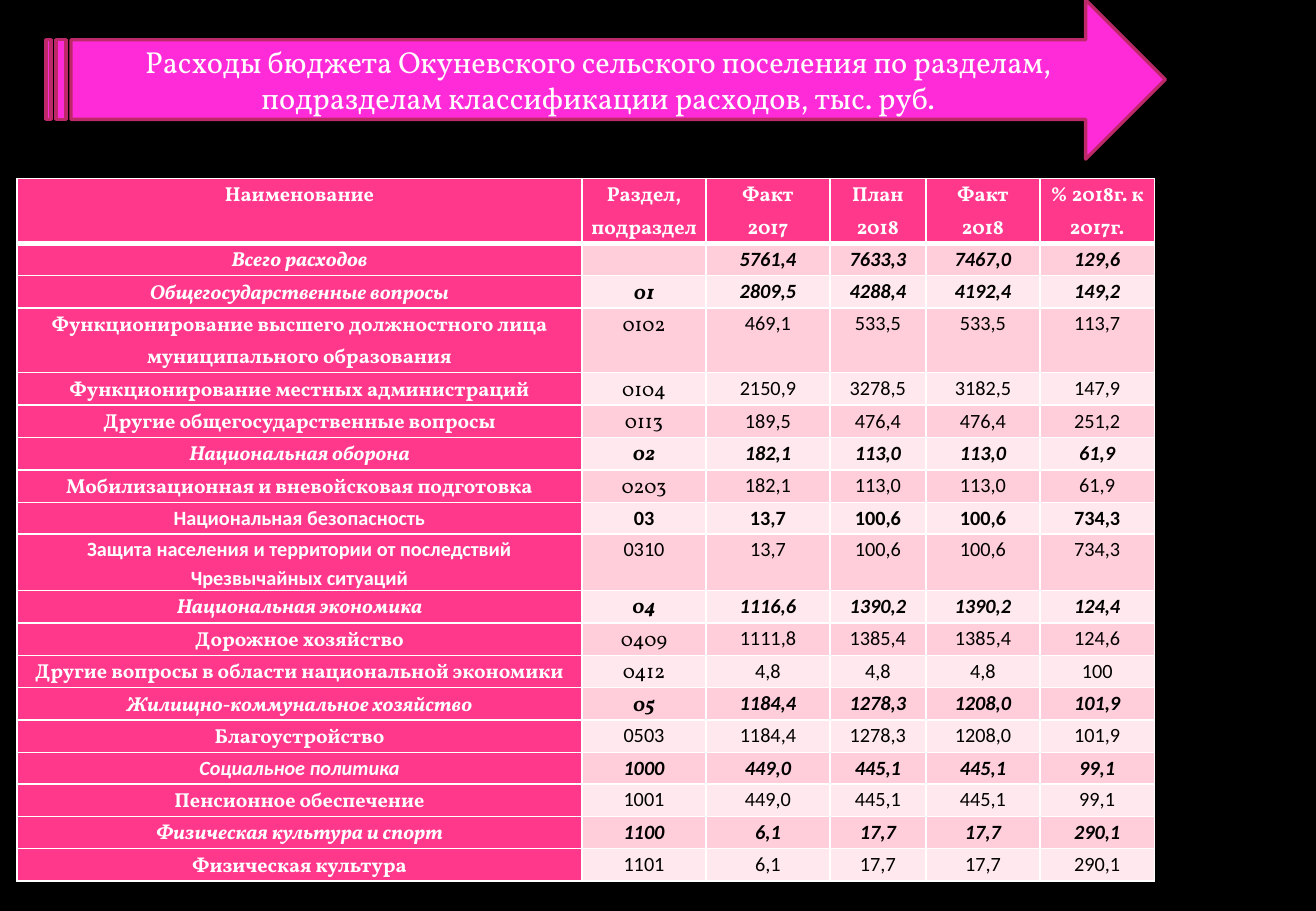
from pptx import Presentation
from pptx.dml.color import RGBColor
from pptx.enum.shapes import MSO_SHAPE
from pptx.enum.text import MSO_ANCHOR, PP_ALIGN
from pptx.oxml import parse_xml
from pptx.oxml.ns import nsdecls
from pptx.util import Inches, Pt

STRIPED_ARROW = MSO_SHAPE.STRIPED_RIGHT_ARROW
CENTER = PP_ALIGN.CENTER
MIDDLE = MSO_ANCHOR.MIDDLE

THEME = {
    "background": "000000", "white": "FFFFFF", "black": "000000",
    "heading": "FF388C", "odd band": "FFCEDA", "even band": "FFE8EE",
    "arrow": "FF2BD8", "arrow edge": "BD2968",
    "serif": "Vollkorn", "sans": "Calibri",
    "title size": 18, "table size": 12,
}

COLUMN_WIDTHS = [4.65, 1.02, 1.02, 0.79, 0.94, 0.94]
ROW_HEIGHT = 0.26
TABLE_LEFT, TABLE_TOP = 0.14, 1.47

TITLE = ("Расходы бюджета Окуневского сельского поселения по разделам, "
         "подразделам классификации расходов, тыс. руб.")
HEADINGS = ["Наименование", "Раздел,\nподраздел", "Факт\n2017",
            "План\n2018", "Факт\n2018", "% 2018г. к 2017г."]
EXPENSES = [
    ["Всего расходов", "", "5761,4", "7633,3", "7467,0", "129,6"],
    ["Общегосударственные вопросы", "01", "2809,5", "4288,4", "4192,4", "149,2"],
    ["Функционирование высшего должностного лица муниципального образования",
     "0102", "469,1", "533,5", "533,5", "113,7"],
    ["Функционирование местных администраций", "0104", "2150,9", "3278,5", "3182,5", "147,9"],
    ["Другие общегосударственные вопросы", "0113", "189,5", "476,4", "476,4", "251,2"],
    ["Национальная оборона", "02", "182,1", "113,0", "113,0", "61,9"],
    ["Мобилизационная и вневойсковая подготовка", "0203", "182,1", "113,0", "113,0", "61,9"],
    ["Национальная безопасность", "03", "13,7", "100,6", "100,6", "734,3"],
    ["Защита населения и территории от последствий Чрезвычайных ситуаций",
     "0310", "13,7", "100,6", "100,6", "734,3"],
    ["Национальная экономика", "04", "1116,6", "1390,2", "1390,2", "124,4"],
    ["Дорожное хозяйство", "0409", "1111,8", "1385,4", "1385,4", "124,6"],
    ["Другие вопросы в области национальной экономики", "0412", "4,8", "4,8", "4,8", "100"],
    ["Жилищно-коммунальное хозяйство", "05", "1184,4", "1278,3", "1208,0", "101,9"],
    ["Благоустройство", "0503", "1184,4", "1278,3", "1208,0", "101,9"],
    ["Социальное политика", "1000", "449,0", "445,1", "445,1", "99,1"],
    ["Пенсионное обеспечение", "1001", "449,0", "445,1", "445,1", "99,1"],
    ["Физическая культура и спорт", "1100", "6,1", "17,7", "17,7", "290,1"],
    ["Физическая культура", "1101", "6,1", "17,7", "17,7", "290,1"],
]
SECTIONS = {"", "01", "02", "03", "04", "05", "1000", "1100"}
UPRIGHT_SECTIONS = {"03"}
SANS_NAMES = {"03", "0310", "1000"}
SANS_CODES = {"03", "0310", "0503", "1000", "1001", "1100", "1101"}
TALL_ROWS = {"Раздел,\nподраздел", "0102"}


def write(frame, text, color, **font_format):
    frame.text = text
    for paragraph in frame.paragraphs:
        paragraph.alignment = CENTER
        for run in paragraph.runs:
            run.font.color.rgb = RGBColor.from_string(color)
            for attribute, value in font_format.items():
                setattr(run.font, attribute, value)


def add_borders(cell, widths):
    properties = cell._tc.get_or_add_tcPr()
    for position, (side, width) in enumerate(widths.items()):
        properties.insert(position, parse_xml(
            f'<a:ln{side} {nsdecls("a")} w="{Pt(width)}"><a:solidFill>'
            f'<a:srgbClr val="{THEME["white"]}"/></a:solidFill></a:ln{side}>'))


deck = Presentation()
deck.slide_width, deck.slide_height = Inches(10.83), Inches(7.5)
slide = deck.slides.add_slide(deck.slide_layouts[6])
slide.background.fill.solid()
slide.background.fill.fore_color.rgb = RGBColor.from_string(THEME["background"])

rows = [HEADINGS] + EXPENSES
budget = slide.shapes.add_table(
    len(rows), len(HEADINGS), Inches(TABLE_LEFT), Inches(TABLE_TOP),
    Inches(sum(COLUMN_WIDTHS)), Inches(ROW_HEIGHT * len(rows))).table
for column, width in zip(budget.columns, COLUMN_WIDTHS):
    column.width = Inches(width)

for row_index, row in enumerate(rows):
    code = row[1]
    is_heading = row_index == 0
    is_section = code in SECTIONS
    band = "odd band" if row_index % 2 else "even band"
    budget.rows[row_index].height = Inches(ROW_HEIGHT * (2 if code in TALL_ROWS else 1))
    for column_index, text in enumerate(row):
        cell = budget.cell(row_index, column_index)
        is_name = column_index == 0
        on_pink = is_heading or is_name
        is_sans = not is_heading and (
            column_index > 1 or code in (SANS_NAMES if is_name else SANS_CODES))
        cell.margin_left = cell.margin_right = Inches(0.03)
        cell.margin_top = cell.margin_bottom = 0
        cell.fill.solid()
        cell.fill.fore_color.rgb = RGBColor.from_string(THEME["heading" if on_pink else band])
        write(cell.text_frame, text, THEME["white" if on_pink else "black"],
              name=THEME["sans" if is_sans else "serif"], size=Pt(THEME["table size"]),
              bold=on_pink or is_section,
              italic=is_section and code not in UPRIGHT_SECTIONS)
        for paragraph in cell.text_frame.paragraphs:
            paragraph.line_spacing = 1.15
            if not text:
                ending = paragraph._p.get_or_add_endParaRPr()
                ending.set("sz", str(THEME["table size"] * 100))
        add_borders(cell, {"L": 1, "R": 1, "T": 3 if row_index == 1 else 1,
                           "B": 3 if is_heading else 1})

banner = slide.shapes.add_shape(STRIPED_ARROW, Inches(0.38), 0, Inches(9.21), Inches(1.31))
banner.shadow.inherit = False
banner.fill.solid()
banner.fill.fore_color.rgb = RGBColor.from_string(THEME["arrow"])
banner.line.color.rgb = RGBColor.from_string(THEME["arrow edge"])
banner.line.width = Pt(2)
banner.text_frame.word_wrap = True
banner.text_frame.vertical_anchor = MIDDLE
write(banner.text_frame, TITLE, THEME["white"],
      name=THEME["serif"], size=Pt(THEME["title size"]))

deck.save("out.pptx")
